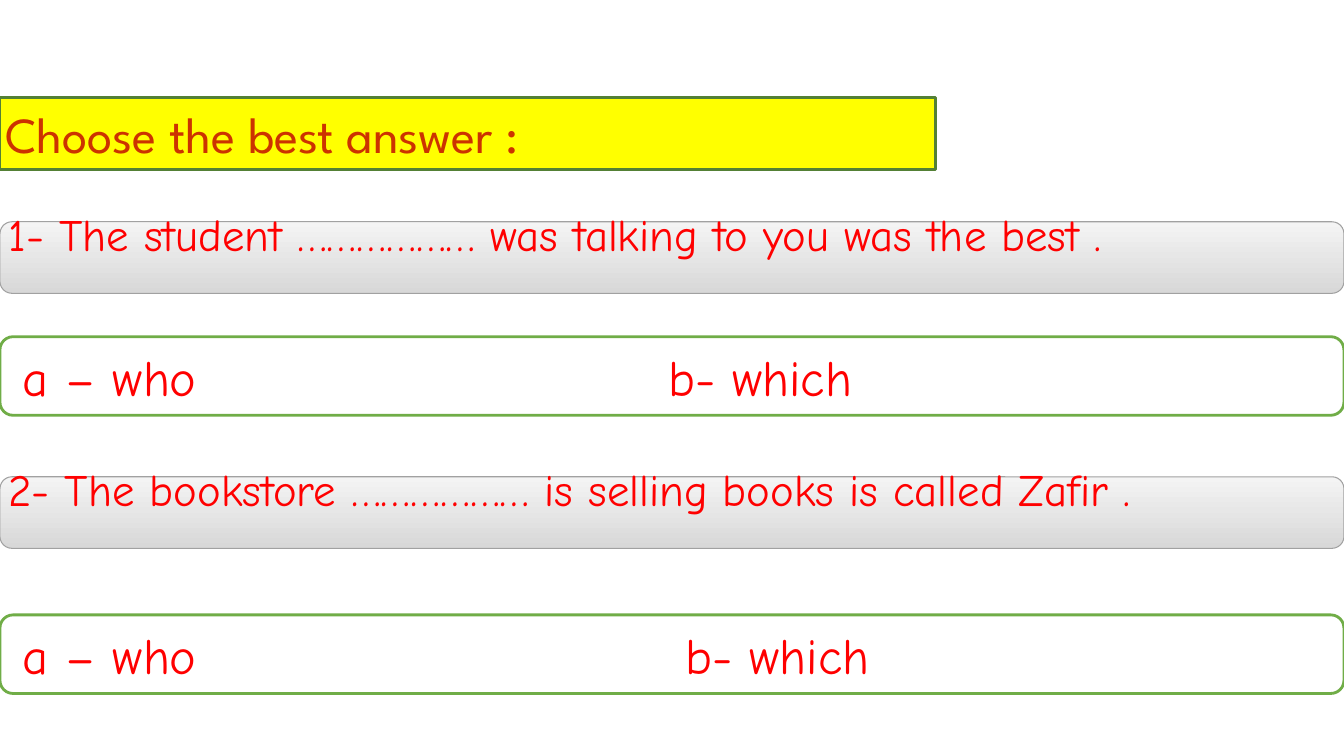
from dataclasses import dataclass
from lxml import etree
from pptx import Presentation
from pptx.dml.color import RGBColor
from pptx.enum.shapes import MSO_SHAPE
from pptx.enum.text import MSO_ANCHOR, MSO_AUTO_SIZE, PP_ALIGN
from pptx.oxml.ns import qn
from pptx.util import Inches, Pt

ROUND = MSO_SHAPE.ROUNDED_RECTANGLE
MIDDLE = MSO_ANCHOR.MIDDLE
FIXED = MSO_AUTO_SIZE.NONE
LEFT = PP_ALIGN.LEFT
WIDE = 13.33


@dataclass(frozen=True)
class Theme:
    head: str = "League Spartan"
    body: str = "Comic Neue"
    big: int = 36
    small: int = 32
    rust: str = "CC3300"
    red: str = "FF0000"
    yellow: str = "FFFF00"
    white: str = "FFFFFF"
    olive: str = "538035"
    green: str = "70AD47"
    gray: str = "A1A1A1"
    dark: str = "D8D8D8"
    light: str = "F4F4F4"


class Quiz:
    def __init__(self, slide, theme):
        self.slide = slide
        self.theme = theme

    def place(self, shape, top, width, height):
        spot = dict(left=0, top=top, width=width, height=height)
        for name, value in spot.items():
            setattr(shape, name, Inches(value))

    def edge(self, shape, color, weight):
        shape.line.color.rgb = RGBColor.from_string(color)
        shape.line.width = Pt(weight)

    def paint(self, shape, color):
        shape.fill.solid()
        shape.fill.fore_color.rgb = RGBColor.from_string(color)

    def label(self, shape, text, font, size, color, left=0.05, low=0.05, tab=None):
        frame = shape.text_frame
        form = dict(word_wrap=True, auto_size=FIXED, vertical_anchor=MIDDLE,
                    margin_left=Inches(left), margin_right=Inches(0.05),
                    margin_top=Inches(0.05), margin_bottom=Inches(low))
        for name, value in form.items():
            setattr(frame, name, value)
        frame.text = text
        para = frame.paragraphs[0]
        para.alignment = LEFT
        if tab:
            stops = etree.SubElement(para._p.get_or_add_pPr(), qn("a:tabLst"))
            etree.SubElement(stops, qn("a:tab"), pos=str(Inches(tab)), algn="l")
        look = dict(name=font, size=Pt(size))
        for run in para.runs:
            for name, value in look.items():
                setattr(run.font, name, value)
            run.font.color.rgb = RGBColor.from_string(color)

    def title(self, text):
        t = self.theme
        shape = self.slide.shapes.title
        self.place(shape, 0.97, 9.28, 0.71)
        self.paint(shape, t.yellow)
        self.edge(shape, t.olive, 2)
        self.label(shape, text, t.head, t.big, t.rust)

    def bar(self, top, height):
        shape = self.slide.shapes.add_shape(
            ROUND, 0, Inches(top), Inches(WIDE), Inches(height))
        shape.shadow.inherit = False
        return shape

    def ask(self, top, text):
        t = self.theme
        shape = self.bar(top, 0.71)
        shape.fill.gradient()
        shape.fill.gradient_angle = 90
        for stop, color in zip(shape.fill.gradient_stops, (t.dark, t.light)):
            stop.color.rgb = RGBColor.from_string(color)
        self.edge(shape, t.gray, 0.75)
        self.label(shape, text, t.body, t.small, t.red, low=0.53)

    def choose(self, top, first, second, tab):
        t = self.theme
        shape = self.bar(top, 0.78)
        self.paint(shape, t.white)
        self.edge(shape, t.green, 2)
        self.label(shape, f"{first}\t{second}", t.body, t.big, t.red,
                   left=0.19, tab=tab)


def main():
    deck = Presentation()
    deck.slide_width = Inches(WIDE)
    deck.slide_height = Inches(7.5)
    quiz = Quiz(deck.slides.add_slide(deck.slide_layouts[5]), Theme())
    quiz.title("Choose the best answer :")
    quiz.ask(2.2, "1- The student ……………… was talking to you was the best .")
    quiz.choose(3.34, "a – who", "b- which", 6.4)
    quiz.ask(4.73, "2- The bookstore ……………… is selling books is called Zafir .")
    quiz.choose(6.1, "a – who", "b- which", 6.57)
    deck.save("out.pptx")


if __name__ == "__main__":
    main()
